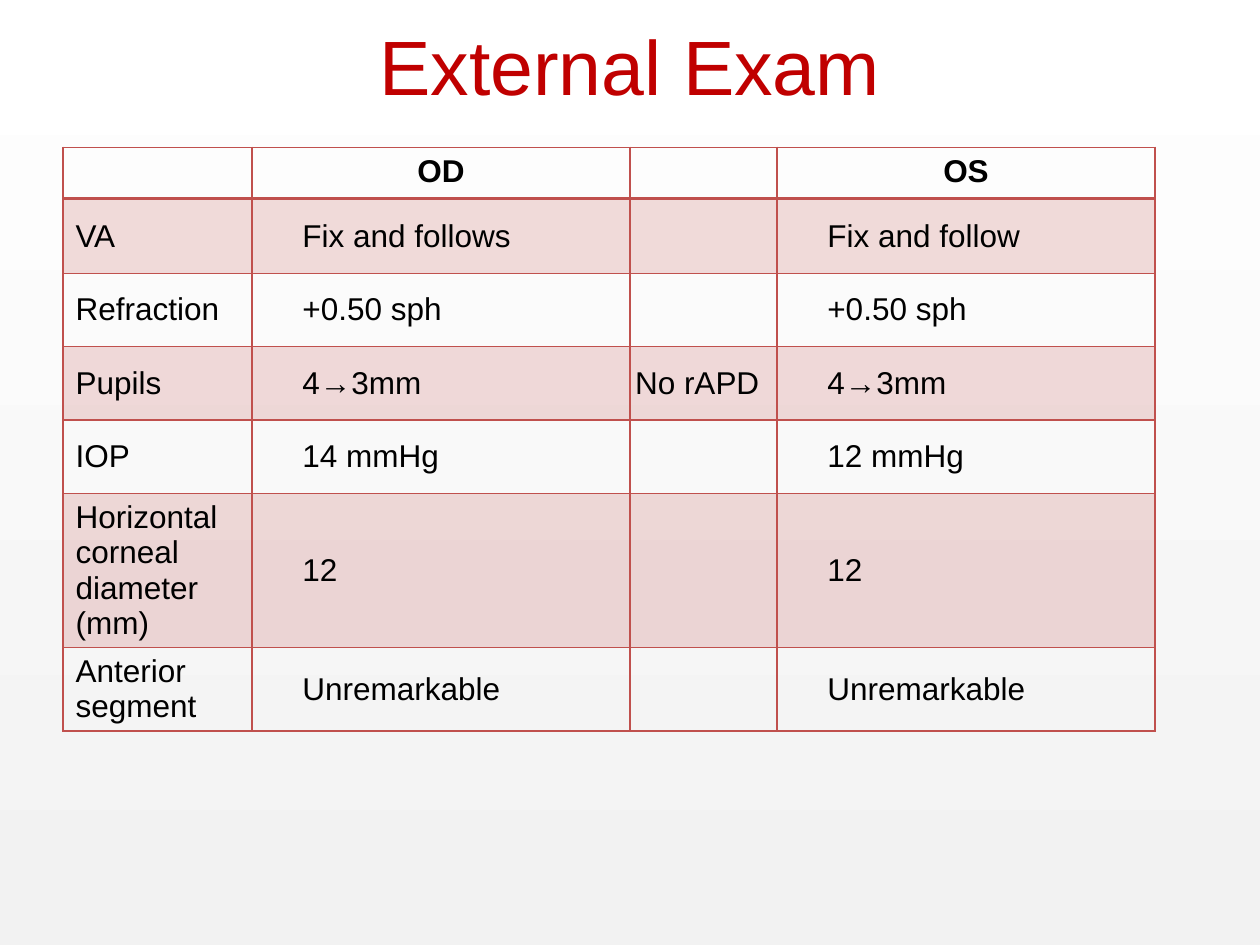
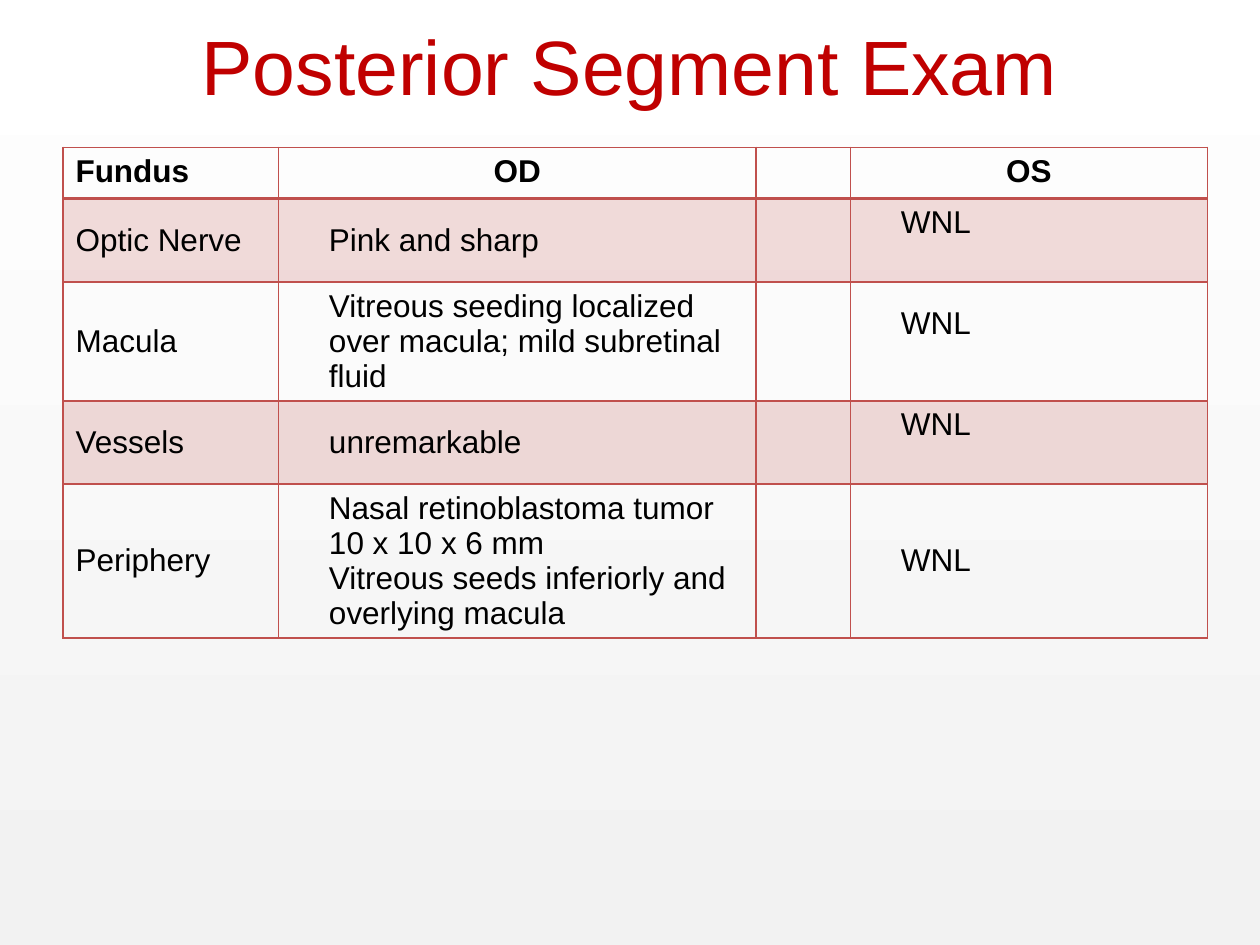
import pptx
import pptx.util
import pptx.dml.color
import pptx.enum.text
import lxml.etree
import pptx.oxml.ns

Pt = pptx.util.Pt
RGB = pptx.dml.color.RGBColor.from_string
ALIGN = pptx.enum.text.PP_ALIGN
ANCHOR = pptx.enum.text.MSO_ANCHOR
qn = pptx.oxml.ns.qn

HUES = {"title": "C00000", "text": "000000", "rule": "C0504D",
        "low": "F2F2F2", "high": "FFFFFF"}
FONT = "Arial"
LINE = 20.2  # height of one line of table text
PAD = 3.6


def write(frame, text, size=18, hue="text", bold=False, align=ALIGN.LEFT):
    frame.text = text
    for para in frame.paragraphs:
        para.alignment = align
        para.font.size = Pt(size)
        para.font.name = FONT
        para.font.bold = bold
        para.font.color.rgb = RGB(HUES[hue])


def edge(cell, side, width):
    """Draw one cell border; side is L, R, T or B."""
    line = lxml.etree.SubElement(cell._tc.get_or_add_tcPr(), qn("a:ln" + side),
                                 w=str(Pt(width)))
    fill = lxml.etree.SubElement(line, qn("a:solidFill"))
    lxml.etree.SubElement(fill, qn("a:srgbClr"), val=HUES["rule"])


# In each row: label, right eye, note, left eye
exams = [
    {"title": "External Exam",
     "cols": [108, 216, 84, 216],
     "heights": [29.5, 42.5, 42, 42, 42, 87.8, 47.8],
     "raised": [],
     "rows": [
         ["", "OD", "", "OS"],
         ["VA", "Fix and follows", "", "Fix and follow"],
         ["Refraction", "+0.50 sph", "", "+0.50 sph"],
         ["Pupils", "4→3mm", "No rAPD", "4→3mm"],
         ["IOP", "14 mmHg", "", "12 mmHg"],
         ["Horizontal corneal diameter (mm)", "12", "", "12"],
         ["Anterior segment", "Unremarkable", "", "Unremarkable"]]},
    {"title": "Posterior Segment Exam",
     "cols": [123.2, 272.8, 54, 204],
     "heights": [29.5, 47.6, 67.8, 47.6, 87.8],
     "raised": [1, 2, 3],
     "rows": [
         ["Fundus", "OD", "", "OS"],
         ["Optic Nerve", "Pink and sharp", "", "WNL"],
         ["Macula", "Vitreous seeding localized over macula; "
                    "mild subretinal fluid", "", "WNL"],
         ["Vessels", "unremarkable", "", "WNL"],
         ["Periphery", "Nasal retinoblastoma tumor 10 x 10 x 6 mm\n"
                       "Vitreous seeds inferiorly and overlying macula",
          "", "WNL"]]},
]

deck = pptx.Presentation()
deck.slide_width, deck.slide_height = Pt(720), Pt(540)

back = deck.slide_master.background.fill
back.gradient()
back.gradient_angle = 90
for stop, hue in zip(back.gradient_stops, ["low", "high"]):
    stop.color.rgb = RGB(HUES[hue])

for exam in exams:
    slide = deck.slides.add_slide(deck.slide_layouts[5])
    title = slide.shapes.title
    title.left, title.top, title.width, title.height = Pt(36), Pt(-8), Pt(648), Pt(90)
    title.text_frame.vertical_anchor = ANCHOR.MIDDLE
    write(title.text_frame, exam["title"], size=44, hue="title", align=ALIGN.CENTER)

    rows, cols, heights = exam["rows"], exam["cols"], exam["heights"]
    table = slide.shapes.add_table(len(rows), len(cols), Pt(36), Pt(84.2),
                                   Pt(sum(cols)), Pt(sum(heights))).table
    table.first_row = table.horz_banding = False
    for col, width in zip(table.columns, cols):
        col.width = Pt(width)

    for r, row in enumerate(rows):
        table.rows[r].height = Pt(heights[r])
        head = r == 0
        for c, text in enumerate(row):
            cell = table.cell(r, c)
            mid = c == 2 or (head and c > 0)
            write(cell.text_frame, text, bold=head,
                  align=ALIGN.CENTER if mid else ALIGN.LEFT)
            cell.vertical_anchor = ANCHOR.TOP if head else ANCHOR.MIDDLE
            cell.margin_left = Pt(7.2 if head else [7.2, 28.8, 0, 28.8][c])
            cell.margin_right = Pt(7.2)
            cell.margin_top = Pt(PAD)
            lift = c == 3 and r in exam["raised"]
            cell.margin_bottom = Pt(PAD + LINE if lift else PAD)

            edge(cell, "L", 1)
            edge(cell, "R", 1)
            edge(cell, "T", 2 if r == 1 else 1)
            edge(cell, "B", 2 if head else 1)
            if r % 2:
                cell.fill.solid()
                cell.fill.fore_color.rgb = RGB(HUES["rule"])
                tint = cell._tc.tcPr.find(qn("a:solidFill"))[0]
                lxml.etree.SubElement(tint, qn("a:alpha"), val="20000")
            else:
                cell.fill.background()

deck.save("out.pptx")
